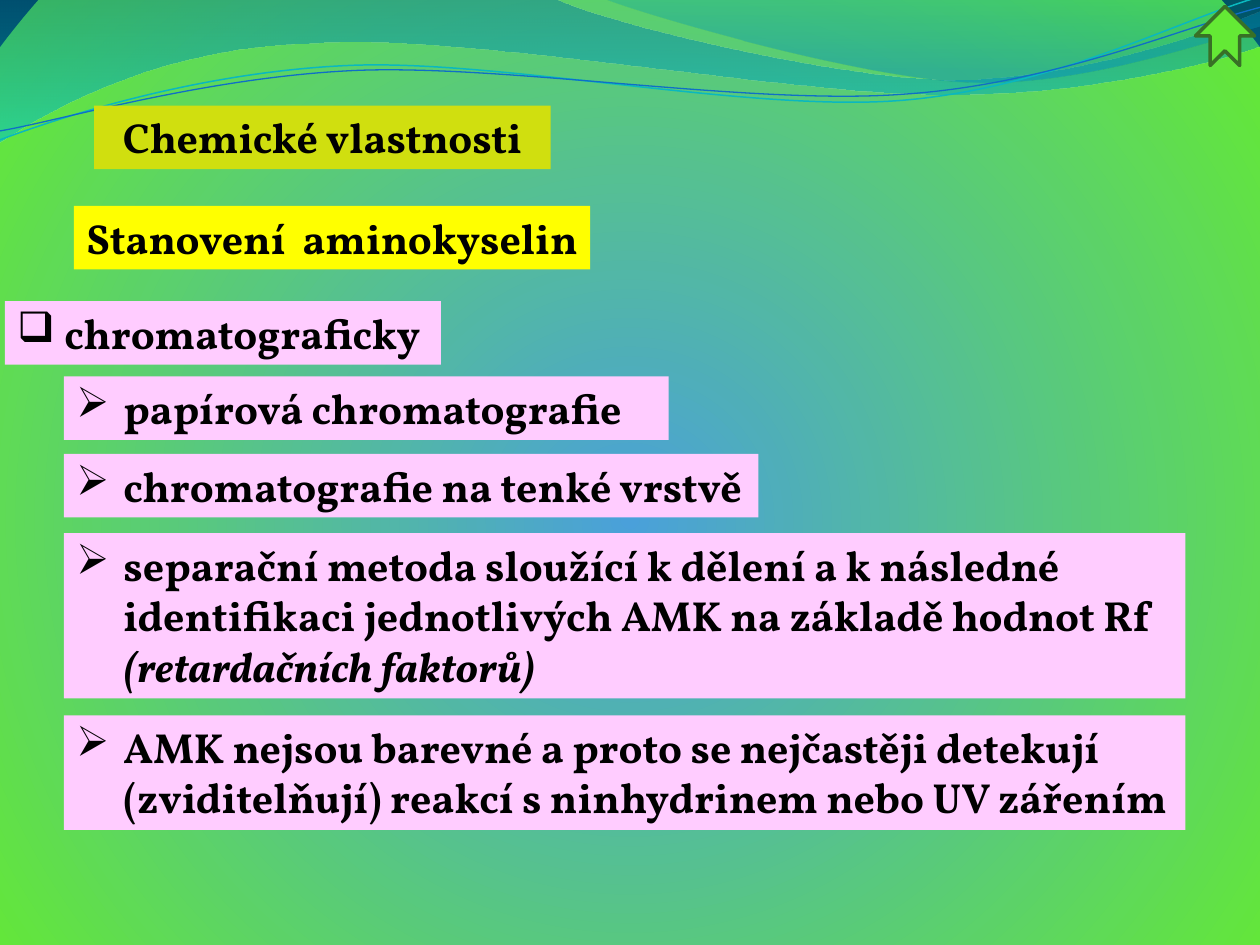
from dataclasses import dataclass

from lxml import etree
from pptx import Presentation
from pptx.dml.color import RGBColor
from pptx.enum.shapes import MSO_SHAPE
from pptx.enum.text import MSO_AUTO_SIZE, PP_ALIGN
from pptx.oxml import parse_xml
from pptx.oxml.ns import nsdecls, qn
from pptx.util import Cm, Pt

NOTCHED_ARROW = MSO_SHAPE.NOTCHED_RIGHT_ARROW
GROW = MSO_AUTO_SIZE.SHAPE_TO_FIT_TEXT
CENTER, LEFT = PP_ALIGN.CENTER, PP_ALIGN.LEFT

BLACK = RGBColor(0x00, 0x00, 0x00)
OLIVE = RGBColor(0xD0, 0xDF, 0x0F)
YELLOW = RGBColor(0xFF, 0xFF, 0x00)
PINK = RGBColor(0xFF, 0xCC, 0xFF)
GREEN = RGBColor(0x64, 0xE9, 0x35)
DARK_GREEN = RGBColor(0x38, 0x70, 0x26)
SKY = RGBColor(0x4A, 0xA0, 0xDA)
NAVY = RGBColor(0x00, 0x33, 0x48)
BLUE = RGBColor(0x0F, 0x6F, 0xC6)
TEAL = RGBColor(0x0A, 0xB8, 0xBF)
WAVE_BLUE = RGBColor(0x00, 0x74, 0xA1)
WAVE_CYAN = RGBColor(0x00, 0xC6, 0xCF)
CREST_TEAL = RGBColor(0x00, 0xA1, 0xA9)
CREST_BLUE = RGBColor(0x00, 0x8B, 0xBF)

FONT = "Vollkorn"
BULLET_FONT = "Wingdings"
ARROWHEAD, BOX = "Ø", "q"  # Wingdings codes
LINE_HEIGHT = 1.28
INDENT = Cm(0.95)

Point = tuple[float, float]
Stop = tuple[int, RGBColor, int]  # position %, colour, opacity %


@dataclass
class Curve:
    """Outline in cm; a segment has one point (line) or three (Bézier)."""
    start: Point
    segments: list[tuple[Point, ...]]


@dataclass
class Wave:
    curve: Curve
    stops: list[Stop]


@dataclass
class Strand:
    curve: Curve
    color: RGBColor
    width: float


@dataclass
class Label:
    left: float
    top: float
    width: float
    fill: RGBColor
    text: str
    bullet: str = ""
    italic: str = ""
    height: float = LINE_HEIGHT


WAVES = [
    Wave(Curve((0, 0), [
        ((11.18, -0.03),),
        ((12.09, 0.43), (16.87, 1.6), (19.25, 1.6)),
        ((21.67, 1.6), (24.33, 0.66), (25.4, 0.23)),
        ((25.43, 0.91),),
        ((24.97, 1.12), (22.1, 1.93), (18.95, 1.9)),
        ((15.8, 1.9), (9.7, 0.71), (6.53, 0.86)),
        ((3.28, 0.91), (1.17, 2.11), (-0.03, 2.87)),
        ((0, 0),),
    ]), [(0, WAVE_BLUE, 45), (100, WAVE_CYAN, 55)]),
    Wave(Curve((12.17, -0.03), [
        ((12.93, 0.28), (17.32, 1.57), (19.53, 1.65)),
        ((21.74, 1.75), (24.41, 0.81), (25.4, 0.53)),
        ((25.4, 0),),
        ((12.17, -0.03),),
    ]), [(0, CREST_TEAL, 30), (80, CREST_BLUE, 45)]),
]

STRANDS = [
    Strand(Curve((0, 2.82), [
        ((1.22, 2.36), (4.01, 1.45), (7.04, 1.32)),
        ((10.03, 1.19), (15.06, 2.26), (18.11, 2.03)),
        ((21.16, 1.8), (23.83, 0.38), (25.35, -0.05)),
    ]), TEAL, 0.85),
    Strand(Curve((0, 2.64), [
        ((1.19, 2.44), (4.17, 1.55), (7.19, 1.42)),
        ((10.24, 1.3), (15.16, 2.13), (18.21, 1.9)),
        ((21.23, 1.7), (23.9, 0.53), (25.4, 0.15)),
    ]), BLUE, 0.75),
]

LABELS = [
    Label(1.9, 2.13, 9.2, OLIVE, "Chemické vlastnosti"),
    Label(1.49, 4.15, 10.41, YELLOW, "Stanovení  aminokyselin"),
    Label(1.29, 7.59, 12.19, PINK, "papírová chromatografie", ARROWHEAD),
    Label(0.1, 6.07, 8.79, PINK, "chromatograficky", BOX),
    Label(1.29, 10.75, 22.61, PINK,
          "separační metoda sloužící k dělení a k následné identifikaci "
          "jednotlivých AMK na základě hodnot Rf ", ARROWHEAD,
          "(retardačních faktorů)", 3.33),
    Label(1.29, 9.15, 14, PINK, "chromatografie na tenké vrstvě", ARROWHEAD),
    Label(1.29, 14.42, 22.61, PINK,
          "AMK nejsou barevné a proto se nejčastěji detekují "
          "(zviditelňují) reakcí s ninhydrinem nebo UV zářením", ARROWHEAD,
          height=2.31),
]


def gradient(stops: list[Stop], direction: str):
    gs = "".join(
        f'<a:gs pos="{pos * 1000}"><a:srgbClr val="{color}">'
        f'<a:alpha val="{opacity * 1000}"/></a:srgbClr></a:gs>'
        for pos, color, opacity in stops)
    return parse_xml(f'<a:gradFill {nsdecls("a")} rotWithShape="1">'
                     f'<a:gsLst>{gs}</a:gsLst>{direction}</a:gradFill>')


def replace_solid(parent, fill) -> None:
    parent.replace(parent.find(qn("a:solidFill")), fill)


def add_curve(s, curve: Curve, close: bool):
    builder = s.shapes.build_freeform(Cm(curve.start[0]), Cm(curve.start[1]))
    points = [(Cm(x), Cm(y)) for segment in curve.segments for x, y in segment]
    builder.add_line_segments(points, close=close)
    sp = builder.convert_to_shape()
    sp.shadow.inherit = False

    # Turn each run of three points into one Bézier segment
    steps = iter(sp._element.findall(".//" + qn("a:lnTo")))
    for segment in curve.segments:
        first, *others = [next(steps) for _ in segment]
        if others:
            first.tag = qn("a:cubicBezTo")
            for step in others:
                first.append(step[0])
                step.getparent().remove(step)
    return sp


def add_wave(s, wave: Wave) -> None:
    sp = add_curve(s, wave.curve, True)
    sp.line.fill.background()
    sp.fill.solid()
    replace_solid(sp._element.spPr,
                  gradient(wave.stops, '<a:lin ang="5400000" scaled="0"/>'))


def add_strand(s, strand: Strand) -> None:
    sp = add_curve(s, strand.curve, False)
    sp.fill.background()
    sp.line.color.rgb = strand.color
    sp.line.width = Pt(strand.width)


def add_label(s, label: Label) -> None:
    sp = s.shapes.add_textbox(Cm(label.left), Cm(label.top),
                              Cm(label.width), Cm(label.height))
    sp.fill.solid()
    sp.fill.fore_color.rgb = label.fill
    tf = sp.text_frame
    tf.word_wrap = True
    tf.auto_size = GROW
    p = tf.paragraphs[0]
    p.alignment = LEFT if label.bullet else CENTER
    if label.bullet:
        pPr = p._p.get_or_add_pPr()
        pPr.set("marL", str(INDENT))
        pPr.set("indent", str(-INDENT))
        font = etree.SubElement(pPr, qn("a:buFont"))
        font.set("typeface", BULLET_FONT)
        font.set("charset", "2")
        etree.SubElement(pPr, qn("a:buChar")).set("char", label.bullet)
    for text, italic in ((label.text, False), (label.italic, True)):
        if text:
            r = p.add_run()
            r.text = text
            r.font.name, r.font.size = FONT, Pt(24)
            r.font.bold, r.font.italic = True, italic
            r.font.color.rgb = BLACK


def main() -> None:
    prs = Presentation()
    prs.slide_width, prs.slide_height = Cm(25.4), Cm(19.05)
    s = prs.slides.add_slide(prs.slide_layouts[6])

    # Radial background
    s.background.fill.solid()
    replace_solid(s._element.find(".//" + qn("p:bgPr")), gradient(
        [(0, SKY, 100), (100, GREEN, 100), (100, NAVY, 100)],
        '<a:path path="circle"><a:fillToRect l="10000" t="110000" '
        'r="10000" b="100000"/></a:path>'))

    # Waves along the top
    for wave in WAVES:
        add_wave(s, wave)
    for strand in STRANDS:
        add_strand(s, strand)

    # Headings and bullet points
    for label in LABELS:
        add_label(s, label)

    # Arrow pointing up
    sp = s.shapes.add_shape(NOTCHED_ARROW, Cm(24.1), Cm(0.13), Cm(1.19), Cm(1.19))
    sp.rotation = 270
    sp.shadow.inherit = False
    sp.fill.solid()
    sp.fill.fore_color.rgb = GREEN
    sp.line.color.rgb = DARK_GREEN
    sp.line.width = Pt(2)

    prs.save("out.pptx")


if __name__ == "__main__":
    main()
